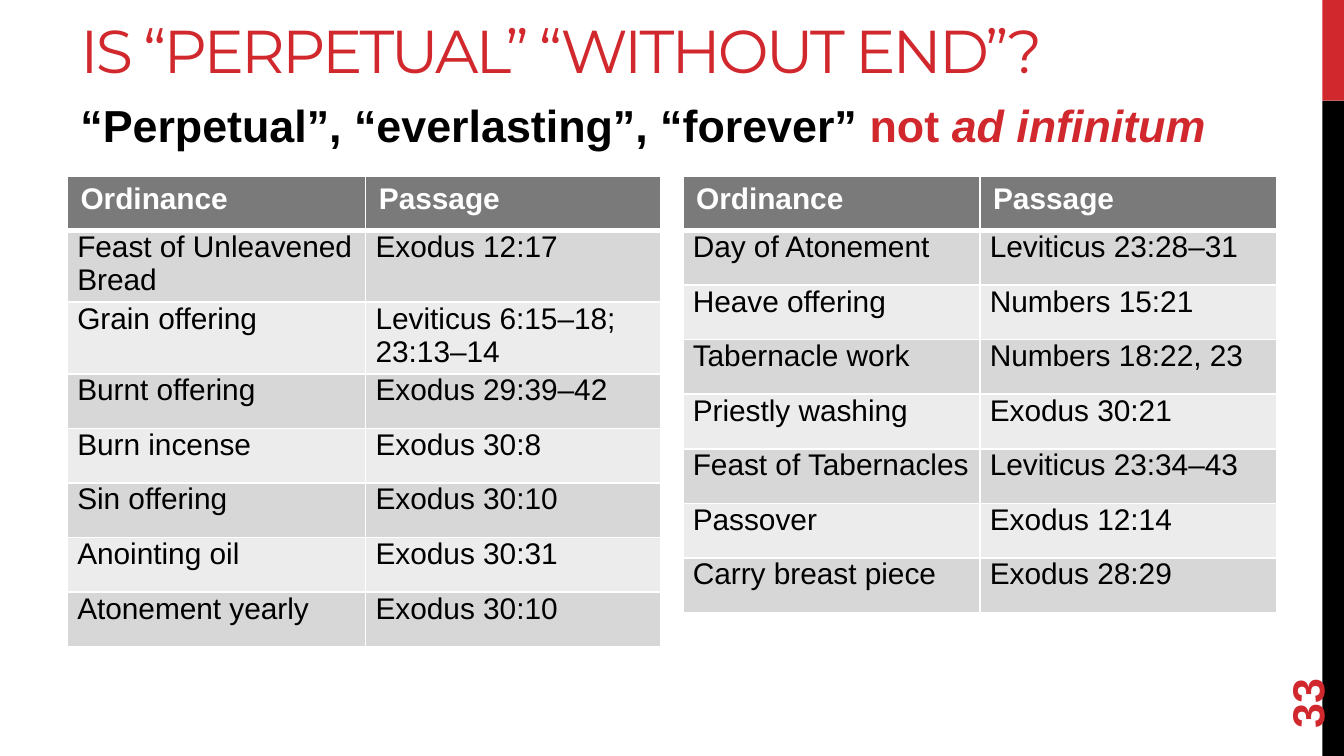
from dataclasses import dataclass

from lxml import etree
from pptx import Presentation
from pptx.dml.color import RGBColor
from pptx.enum import shapes, text
from pptx.oxml import ns
from pptx.util import Inches, Pt

RED = RGBColor(0xD1, 0x28, 0x2E)
BLACK = RGBColor(0, 0, 0)
WHITE = RGBColor(0xFF, 0xFF, 0xFF)
HEADER_GRAY = RGBColor(0x7A, 0x7A, 0x7A)
BANDS = (RGBColor(0xD7, 0xD7, 0xD7), RGBColor(0xEC, 0xEC, 0xEC))

TABLE_TOP = 1.31
ROWS_HEIGHT = 3.25
HEADINGS = ("Ordinance", "Passage")
HEADER_BORDERS = {"lnL": 1, "lnR": 1, "lnT": 1, "lnB": 3}
HEADER_FONT = {"name": "Arial", "size": Pt(16), "bold": True}
BODY_FONT = {"name": "Arial", "size": Pt(16), "bold": False}
STRONG_FONT = {"name": "Arial", "size": Pt(24), "bold": True}


@dataclass
class Run:
    words: str
    color: RGBColor
    font: dict


@dataclass
class OrdinanceTable:
    left: float
    height: float
    widths: tuple[float, float]
    rows: list[tuple[str, str]]


TABLES = [
    OrdinanceTable(5.08, 3.37, (2.21, 2.21), [
        ("Day of Atonement", "Leviticus 23:28–31"),
        ("Heave offering", "Numbers 15:21"),
        ("Tabernacle work", "Numbers 18:22, 23"),
        ("Priestly washing", "Exodus 30:21"),
        ("Feast of Tabernacles", "Leviticus 23:34–43"),
        ("Passover", "Exodus 12:14"),
        ("Carry breast piece", "Exodus 28:29"),
    ]),
    OrdinanceTable(0.5, 3.5, (2.22, 2.2), [
        ("Feast of Unleavened Bread", "Exodus 12:17"),
        ("Grain offering", "Leviticus 6:15–18; \v23:13–14"),
        ("Burnt offering", "Exodus 29:39–42"),
        ("Burn incense", "Exodus 30:8"),
        ("Sin offering", "Exodus 30:10"),
        ("Anointing oil", "Exodus 30:31"),
        ("Atonement yearly", "Exodus 30:10"),
    ]),
]


def style_font(font, color: RGBColor, values: dict) -> None:
    for attribute, value in values.items():
        setattr(font, attribute, value)
    font.color.rgb = color


def add_bar(slide, top: float, height: float, color: RGBColor) -> None:
    bar = slide.shapes.add_shape(shapes.MSO_SHAPE.RECTANGLE, Inches(9.84),
                                 Inches(top), Inches(0.16), Inches(height))
    bar.shadow.inherit = False
    bar.fill.solid()
    bar.fill.fore_color.rgb = color
    bar.line.fill.background()


def add_text(slide, box: tuple, runs: list[Run], anchor=text.MSO_ANCHOR.MIDDLE):
    label = slide.shapes.add_textbox(*map(Inches, box))
    label.text_frame.word_wrap = True
    label.text_frame.vertical_anchor = anchor
    for item in runs:
        run = label.text_frame.paragraphs[0].add_run()
        run.text = item.words
        style_font(run.font, item.color, item.font)
    return label


def add_header_borders(cell) -> None:
    """White borders; the body cells take theirs from the table style."""
    properties = cell._tc.get_or_add_tcPr()
    for side, width in HEADER_BORDERS.items():
        line = etree.SubElement(properties, ns.qn(f"a:{side}"), w=str(Pt(width)))
        fill = etree.SubElement(line, ns.qn("a:solidFill"))
        etree.SubElement(fill, ns.qn("a:srgbClr"), val=str(WHITE))


def fill_cell(cell, words: str, row: int) -> None:
    header = row == 0
    cell.text = words
    if header:
        add_header_borders(cell)
    else:
        cell.margin_left = cell.margin_right = Pt(5.4)
        cell.margin_top = cell.margin_bottom = 0
    for run in cell.text_frame.paragraphs[0].runs:
        style_font(run.font, WHITE if header else BLACK,
                   HEADER_FONT if header else BODY_FONT)
    cell.fill.solid()
    cell.fill.fore_color.rgb = HEADER_GRAY if header else BANDS[(row - 1) % 2]


def add_ordinances(slide, ordinances: OrdinanceTable) -> None:
    rows = [HEADINGS, *ordinances.rows]
    frame = slide.shapes.add_table(
        len(rows), len(HEADINGS), Inches(ordinances.left), Inches(TABLE_TOP),
        Inches(sum(ordinances.widths)), Inches(ROWS_HEIGHT))
    for column, width in zip(frame.table.columns, ordinances.widths):
        column.width = Inches(width)
    for row, entries in enumerate(rows):
        for column, words in enumerate(entries):
            fill_cell(frame.table.cell(row, column), words, row)
    frame.height = Inches(ordinances.height)


def main() -> None:
    deck = Presentation()
    deck.slide_width = Inches(10)
    deck.slide_height = deck.slide_width * 9 // 16
    slide = deck.slides.add_slide(deck.slide_layouts[6])

    add_bar(slide, 0, 0.75, RED)
    add_bar(slide, 0.75, 4.88, BLACK)

    title = add_text(slide, (0.5, 0.07, 9, 0.6), [
        Run("IS “PERPETUAL” “WITHOUT END”?", RED,
            {"name": "Montserrat", "size": Pt(32.4)})])
    title_run = title.text_frame.paragraphs[0].runs[0]
    title_run.font._element.set("spc", "-150")

    statement = add_text(slide, (0.5, 0.68, 9, 4.72), [
        Run("“Perpetual”, “everlasting”, “forever” ", BLACK, STRONG_FONT),
        Run("not ", RED, STRONG_FONT),
        Run("ad infinitum", RED, STRONG_FONT | {"italic": True}),
    ], text.MSO_ANCHOR.TOP)
    statement.text_frame.paragraphs[0].space_before = Pt(2)
    statement.text_frame.paragraphs[0].space_after = Pt(6)

    page_number = add_text(slide, (9.18, 4.78, 1.08, 0.4),
                           [Run("33", RED, STRONG_FONT)])
    page_number.rotation = 270

    for ordinances in TABLES:
        add_ordinances(slide, ordinances)
    deck.save("out.pptx")


if __name__ == "__main__":
    main()
